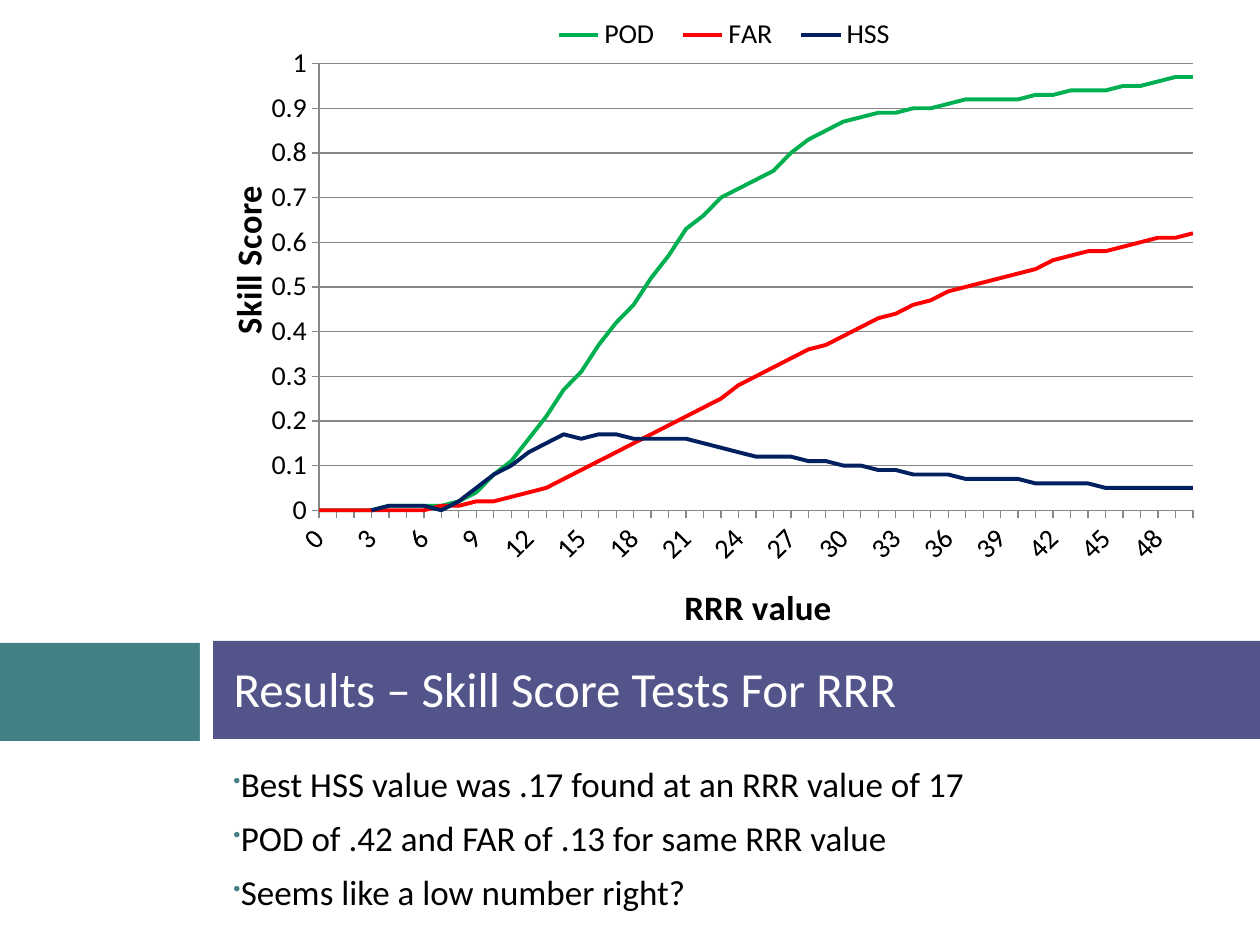
from dataclasses import dataclass
from typing import Optional

from lxml import etree
from pptx import Presentation
from pptx import util as u
from pptx.chart.data import CategoryChartData
from pptx.dml.color import RGBColor
from pptx.enum import chart as ch, shapes, text
from pptx.oxml import parse_xml
from pptx.oxml.ns import nsdecls, qn

PX = 914400 / 126
FONT = "Calibri"
TEAL = RGBColor(0x43, 0x80, 0x86)
INDIGO = RGBColor(0x53, 0x54, 0x8A)
WHITE = RGBColor(0xFF, 0xFF, 0xFF)
BLACK = RGBColor(0, 0, 0)
GRAY = RGBColor(0x87, 0x87, 0x87)
GREEN = RGBColor(0x00, 0xB0, 0x50)
RED = RGBColor(0xFF, 0, 0)
NAVY = RGBColor(0x00, 0x20, 0x60)


@dataclass(frozen=True)
class Box:
    x: int
    y: int
    w: int
    h: int

    def emu(self) -> list[u.Emu]:
        return [u.Emu(round(v * PX)) for v in (self.x, self.y, self.w, self.h)]


@dataclass(frozen=True)
class Panel:
    box: Box
    fill: RGBColor
    line: Optional[RGBColor] = None


@dataclass(frozen=True)
class Score:
    name: str
    color: RGBColor
    percents: list[Optional[int]]


PANELS = [
    Panel(Box(-1, 643, 201, 98), TEAL),
    Panel(Box(213, 641, 1047, 98), INDIGO),
    Panel(Box(200, 0, 13, 946), WHITE),
    Panel(Box(210, 0, 1050, 630), WHITE, WHITE),
]
TITLE = "Results – Skill Score Tests For RRR"
TITLE_BOX = Box(221, 640, 1008, 95)
BULLETS = [
    "Best HSS value was .17 found at an RRR value of 17",
    "POD of .42 and FAR of .13 for same RRR value",
    "Seems like a low number right?",
]
BULLET_BOX = Box(221, 756, 1008, 189)
CHART_BOX = Box(199, 0, 1029, 640)
PLOT_BOX = Box(319, 65, 874, 456)
LEGEND_BOX = Box(539, 13, 370, 45)
SCORE_TITLE_AT = (217, 186)
VALUE_TITLE_AT = (678, 589)
SCORES = [
    Score("POD", GREEN, [
        0, 0, 0, 0, 1, 1, 1, 1, 2, 4, 8, 11, 16, 21, 27, 31, 37, 42, 46, 52,
        57, 63, 66, 70, 72, 74, 76, 80, 83, 85, 87, 88, 89, 89, 90, 90, 91,
        92, 92, 92, 92, 93, 93, 94, 94, 94, 95, 95, 96, 97, 97]),
    Score("FAR", RED, [
        0, 0, 0, 0, 0, 0, 0, 1, 1, 2, 2, 3, 4, 5, 7, 9, 11, 13, 15, 17,
        19, 21, 23, 25, 28, 30, 32, 34, 36, 37, 39, 41, 43, 44, 46, 47, 49,
        50, 51, 52, 53, 54, 56, 57, 58, 58, 59, 60, 61, 61, 62]),
    Score("HSS", NAVY, [
        None, None, None, 0, 1, 1, 1, 0, 2, 5, 8, 10, 13, 15, 17, 16, 17, 17,
        16, 16, 16, 16, 15, 14, 13, 12, 12, 12, 11, 11, 10, 10, 9, 9, 8, 8, 8,
        7, 7, 7, 7, 6, 6, 6, 6, 5, 5, 5, 5, 5, 5]),
]


def style_font(font, size: int, color: RGBColor = BLACK, bold: bool = False) -> None:
    font.name, font.size, font.bold = FONT, u.Pt(size), bold
    font.color.rgb = color


def draw_panel(s, panel: Panel) -> None:
    sp = s.shapes.add_shape(shapes.MSO_SHAPE.RECTANGLE, *panel.box.emu())
    sp.shadow.inherit = False
    sp.fill.solid()
    sp.fill.fore_color.rgb = panel.fill
    if panel.line is None:
        sp.line.fill.background()
    else:
        sp.line.color.rgb = panel.line
        sp.line.width = u.Pt(1.5)


def draw_title(s) -> None:
    sp = s.shapes.title
    s.shapes.element.append(sp.element)  # bring in front of the band
    sp.left, sp.top, sp.width, sp.height = TITLE_BOX.emu()
    tf = sp.text_frame
    tf.text = TITLE
    tf.vertical_anchor = text.MSO_ANCHOR.MIDDLE
    p = tf.paragraphs[0]
    p.alignment = text.PP_ALIGN.LEFT
    style_font(p.runs[0].font, 28, WHITE)


def add_bullet(p) -> None:
    pPr = p._p.get_or_add_pPr()
    color = etree.SubElement(pPr, qn("a:buClr"))
    etree.SubElement(color, qn("a:srgbClr"), val=str(TEAL))
    etree.SubElement(pPr, qn("a:buSzPct"), val="60000")
    etree.SubElement(pPr, qn("a:buChar"), char="•")


def draw_bullets(s) -> None:
    tf = s.shapes.add_textbox(*BULLET_BOX.emu()).text_frame
    tf.word_wrap = True
    tf.text = "\n".join(BULLETS)
    for p in tf.paragraphs:
        p.space_before = u.Pt(7)
        add_bullet(p)
        style_font(p.runs[0].font, 20)


def place(part, after: str, x: int, y: int, w: int = 0, h: int = 0,
          inner: bool = False) -> None:
    """Pin a chart part to slide px; its layout follows the child named after."""
    for old in part.findall(qn("c:layout")):
        part.remove(old)
    sizes = {"x": (x - CHART_BOX.x) / CHART_BOX.w, "y": (y - CHART_BOX.y) / CHART_BOX.h}
    if w:
        sizes |= {"w": w / CHART_BOX.w, "h": h / CHART_BOX.h}
    values = "".join(f'<c:{k} val="{v:.4f}"/>' for k, v in sizes.items())
    target = '<c:layoutTarget val="inner"/>' if inner else ""
    layout = parse_xml(
        f'<c:layout {nsdecls("c")}><c:manualLayout>{target}<c:xMode val="edge"/>'
        f'<c:yMode val="edge"/>{values}</c:manualLayout></c:layout>')
    previous = part.find(qn(after)) if after else None
    if previous is None:
        part.insert(0, layout)
    else:
        previous.addnext(layout)


def style_axis(axis, title: str, at: tuple[int, int]) -> None:
    tf = axis.axis_title.text_frame
    tf.text = title
    style_font(tf.paragraphs[0].runs[0].font, 20, bold=True)
    place(axis.axis_title._element, "c:tx", *at)
    style_font(axis.tick_labels.font, 16)
    axis.major_tick_mark = ch.XL_TICK_MARK.OUTSIDE
    axis.format.line.color.rgb = GRAY


def start_lines_on_axis(chart) -> None:
    val_ax = chart.value_axis._element
    cross = val_ax.find(qn("c:crossBetween"))
    if cross is None:
        cross = etree.Element(qn("c:crossBetween"))
        val_ax.find(qn("c:crosses")).addnext(cross)
    cross.set("val", "midCat")


def label_every_third(axis) -> None:
    axis._element.find(qn("c:txPr")).find(qn("a:bodyPr")).set("rot", "-2700000")
    skip = etree.Element(qn("c:tickLblSkip"), val="3")
    axis._element.find(qn("c:noMultiLvlLbl")).addprevious(skip)


def draw_chart(s) -> None:
    data = CategoryChartData(number_format="General")
    data.categories = range(51)
    for score in SCORES:
        data.add_series(score.name, [None if v is None else v / 100 for v in score.percents])
    chart = s.shapes.add_chart(ch.XL_CHART_TYPE.LINE, *CHART_BOX.emu(), data).chart
    style_font(chart.font, 10)
    chart.has_title = False
    chart.has_legend = True
    legend, box = chart.legend, LEGEND_BOX
    legend.position = ch.XL_LEGEND_POSITION.TOP
    legend.include_in_layout = False
    style_font(legend.font, 16)
    place(legend._element, "c:legendPos", box.x, box.y, box.w, box.h)
    chart.plots[0].vary_by_categories = False
    for series, score in zip(chart.plots[0].series, SCORES):
        series.smooth = False
        series.marker.style = ch.XL_MARKER_STYLE.NONE
        series.format.line.color.rgb = score.color
        series.format.line.width = u.Pt(2.25)
    style_axis(chart.category_axis, "RRR value", VALUE_TITLE_AT)
    label_every_third(chart.category_axis)
    val_ax = chart.value_axis
    style_axis(val_ax, "Skill Score", SCORE_TITLE_AT)
    val_ax.minimum_scale, val_ax.maximum_scale, val_ax.major_unit = 0, 1, 0.1
    val_ax.major_gridlines.format.line.color.rgb = GRAY
    start_lines_on_axis(chart)
    area, box = chart.element.find(".//" + qn("c:plotArea")), PLOT_BOX
    place(area, "", box.x, box.y, box.w, box.h, inner=True)


def main() -> None:
    prs = Presentation()
    prs.slide_width, prs.slide_height = u.Inches(10), u.Inches(7.5)
    s = prs.slides.add_slide(prs.slide_layouts[5])
    for panel in PANELS:
        draw_panel(s, panel)
    draw_bullets(s)
    draw_title(s)
    draw_chart(s)
    prs.save("out.pptx")


if __name__ == "__main__":
    main()
